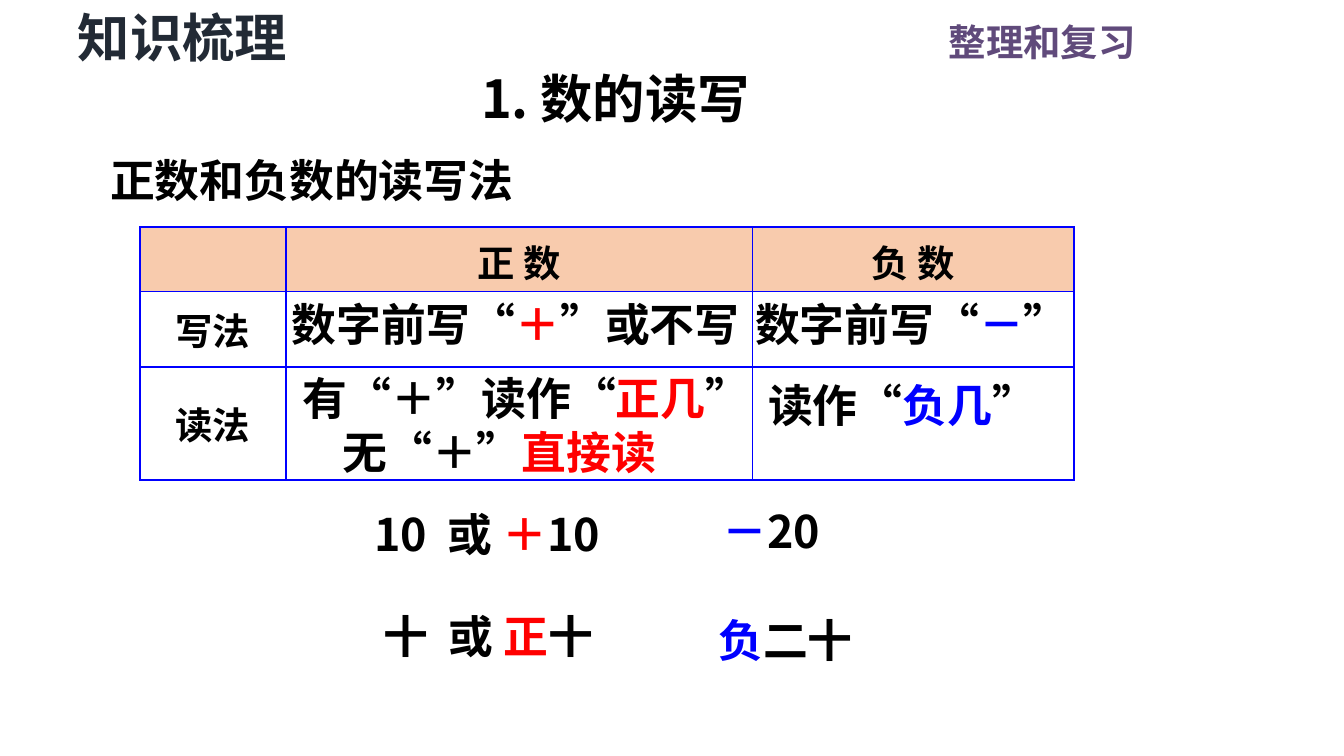
import pptx
import pptx.util
import pptx.dml.color
import pptx.enum.text
import pptx.oxml.ns
from lxml import etree

Inches, Pt = pptx.util.Inches, pptx.util.Pt
ALIGN = pptx.enum.text.PP_ALIGN
FONT = "Noto Sans CJK SC"
BLACK, RED, BLUE = "000000", "FF0000", "0000FF"
PURPLE, NAVY, PEACH = "604A7B", "222A35", "F8CBAD"


def rgb(value):
    return pptx.dml.color.RGBColor.from_string(value)


def sub(parent, tag, **attrs):
    return etree.SubElement(parent, pptx.oxml.ns.qn(tag), **attrs)


def write(p, pieces, size, align):
    """Fill a paragraph with (text, colour[, extra character spacing in pt]) pieces."""
    p.alignment = align
    for text, color, *spacing in pieces:
        r = p.add_run()
        r.text = text
        r.font.size, r.font.bold, r.font.name = Pt(size), True, FONT
        r.font.color.rgb = rgb(color)
        rPr = r.font._element
        sub(rPr, "a:ea", typeface=FONT)
        if spacing:
            rPr.set("spc", str(round(spacing[0] * 100)))


def add_text(slide, box, pieces, size=24, align=ALIGN.CENTER, wrap=True, inset=(0.1, 0.05)):
    s = slide.shapes.add_textbox(*map(Inches, box))
    tf = s.text_frame
    tf.word_wrap = wrap
    tf.margin_left = tf.margin_right = Inches(inset[0])
    tf.margin_top = tf.margin_bottom = Inches(inset[1])
    write(tf.paragraphs[0], pieces, size, align)
    return tf.paragraphs[0]


def add_headings(slide):
    add_text(slide, (5.79, 0.09, 2.76, 0.44), [("整理和复习", PURPLE)], 20, ALIGN.RIGHT)
    left = dict(align=ALIGN.LEFT, inset=(0.07, 0.04))
    add_text(slide, (0.51, 0, 2.02, 0.55), [("知识梳理", NAVY)], 28, **left)
    add_text(slide, (3.51, 0.45, 2.95, 0.55), [("1. 数的读写", BLACK)], 28, **left)
    p = add_text(slide, (0.75, 1.02, 5.7, 0.5), [("正数和负数的读写法", BLACK)], **left)
    p.line_spacing = 1.2


def style_cell(cell, text, fill):
    cell.vertical_anchor = pptx.enum.text.MSO_ANCHOR.MIDDLE
    cell.margin_top, cell.margin_bottom = Inches(0.05), Inches(0.02 if fill else 0.05)
    if text:
        write(cell.text_frame.paragraphs[0], [(text, BLACK)], 20, ALIGN.CENTER)
    tcPr = cell._tc.get_or_add_tcPr()
    for side in ("a:lnL", "a:lnR", "a:lnT", "a:lnB"):
        ln = sub(tcPr, side, w=str(Pt(1)))
        sub(sub(ln, "a:solidFill"), "a:srgbClr", val=BLUE)
    if fill:
        cell.fill.solid()
        cell.fill.fore_color.rgb = rgb(fill)
    else:
        cell.fill.background()


def add_rules_table(slide, box):
    """Place the grid of rules and the coloured wording that lies over its cells."""
    x, y = box[:2]
    labels = [["", "正 数", "负 数"], ["写法", "", ""], ["读法", "", ""]]
    table = slide.shapes.add_table(3, 3, *map(Inches, box)).table
    for column, width in zip(table.columns, (1.09, 3.47, 2.39)):
        column.width = Inches(width)
    for row, height in zip(table.rows, (0.48, 0.56, 0.84)):
        row.height = Inches(height)
    for i, row in enumerate(labels):
        for j, text in enumerate(row):
            style_cell(table.cell(i, j), text, PEACH if i == 0 else None)

    rules = [
        (1, 0.47, 3.59, [("数字前写“", BLACK), ("＋", RED), ("”或不写", BLACK)]),
        (1.08, 1.02, 3.59, [("有“＋”读作“", BLACK), ("正几", RED), ("”", BLACK)]),
        (1.39, 1.42, 2.57, [("无“＋”", BLACK), ("直接读", RED)]),
        (4.46, 0.47, 2.57, [("数字前写“", BLACK), ("－", BLUE), ("”", BLACK)]),
        (4.56, 1.07, 2.23, [("读作“", BLACK), ("负几", BLUE), ("”", BLACK)]),
    ]
    for dx, dy, width, pieces in rules:
        add_text(slide, (x + dx, y + dy, width, 0.5), pieces, wrap=False)


def add_examples(slide, x, y):
    gap = (" ", BLACK, 5.4)
    examples = [
        (0, 0.02, 2.07, False, [("10", BLACK), gap, ("或 ", BLACK), ("＋", RED), ("10", BLACK)]),
        (0.01, 0.78, 2.07, False, [("十", BLACK), gap, ("或 ", BLACK), ("正", RED), ("十", BLACK)]),
        (2.6, 0, 1.1, True, [("－", BLUE), ("20", BLACK)]),
        (2.56, 0.81, 1.39, True, [("负", BLUE), ("二十", BLACK)]),
    ]
    for dx, dy, width, wrap, pieces in examples:
        add_text(slide, (x + dx, y + dy, width, 0.5), pieces, wrap=wrap)


def main():
    prs = pptx.Presentation()
    prs.slide_width = Inches(10)
    prs.slide_height = prs.slide_width * 9 // 16
    slide = prs.slides.add_slide(prs.slide_layouts[6])
    add_headings(slide)
    add_rules_table(slide, (1.04, 1.69, 6.95, 1.88))
    add_examples(slide, 2.59, 3.7)
    prs.save("out.pptx")


if __name__ == "__main__":
    main()
